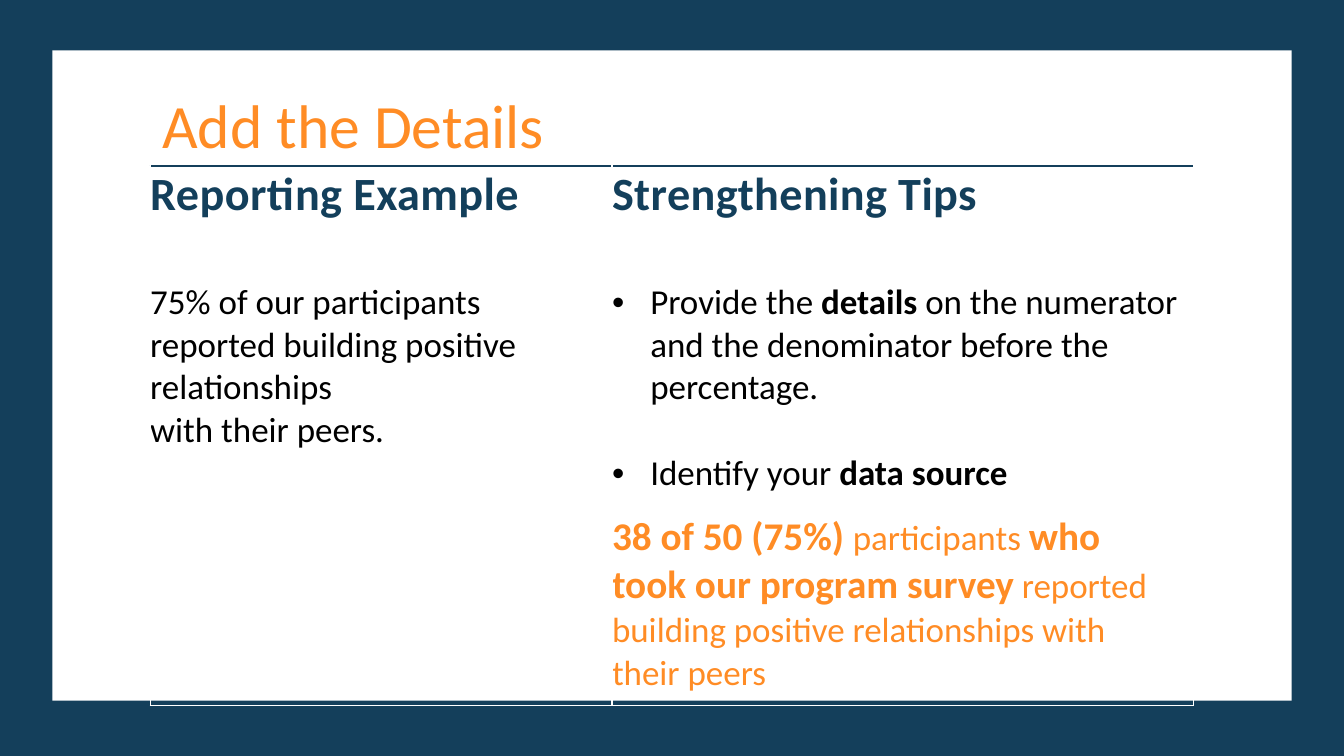
from lxml.etree import SubElement
from pptx import Presentation
from pptx.dml.color import RGBColor
from pptx.enum.shapes import MSO_SHAPE
from pptx.enum.text import MSO_ANCHOR, MSO_AUTO_SIZE, PP_ALIGN
from pptx.oxml import parse_xml
from pptx.oxml.ns import nsdecls, qn
from pptx.util import Inches, Pt

COLORS = {"navy": "143F5B", "heading": "133F5B", "orange": "FF8C25",
          "white": "FFFFFF", "black": "000000"}


def write(paragraph, *runs, size=25, color="black", bold=False, spacing=0,
          before=0, bullet=False):
    """Fill a paragraph; a run is a string or a (string, size) pair set in bold."""
    if bullet:
        properties = paragraph._p.get_or_add_pPr()
        properties.set("marL", str(Inches(0.38)))
        properties.set("indent", str(-Inches(0.38)))
        SubElement(properties, qn("a:buFont"), typeface="Arial")
        SubElement(properties, qn("a:buChar"), char="•")
    paragraph.alignment = PP_ALIGN.LEFT
    paragraph.space_before = Pt(before)
    for part in runs:
        text, run_size, run_bold = (part, size, bold) if isinstance(part, str) else (*part, True)
        run = paragraph.add_run()
        run.text = text
        run.font.name = "Calibri"
        run.font.size = Pt(run_size)
        run.font.bold = run_bold
        run.font.color.rgb = RGBColor.from_string(COLORS[color])
        if spacing:
            run._r.get_or_add_rPr().set("spc", str(round(spacing * 100)))


prs = Presentation()
prs.slide_width, prs.slide_height = Inches(13.33), Inches(7.5)
slide = prs.slides.add_slide(prs.slide_layouts[5])

# Navy frame around a white panel
for color, box in (("navy", (0, 0, 13.33, 7.5)), ("white", (0.52, 0.5, 12.29, 6.45))):
    panel = slide.shapes.add_shape(MSO_SHAPE.RECTANGLE, *map(Inches, box))
    panel.shadow.inherit = False
    panel.fill.solid()
    panel.fill.fore_color.rgb = RGBColor.from_string(COLORS[color])
    panel.line.fill.background()

# Two-column comparison
comparison = slide.shapes.add_table(
    2, 2, Inches(1.49), Inches(1.65), Inches(10.35), Inches(5.35)).table
comparison.first_row = comparison.horz_banding = False
for column, width in zip(comparison.columns, (4.58, 5.77)):
    column.width = Inches(width)
for row, height, right_margin in zip(comparison.rows, (1.14, 4.21), (0.02, 0.14)):
    row.height = Inches(height)
    for cell in row.cells:
        cell.margin_left = cell.margin_top = cell.margin_bottom = 0
        cell.margin_right = Inches(right_margin)
        cell.vertical_anchor = MSO_ANCHOR.TOP
        cell.fill.background()

for cell, heading in zip(comparison.rows[0].cells, ("Reporting Example", "Strengthening Tips")):
    write(cell.text_frame.paragraphs[0], heading, size=33, color="heading",
          bold=True, spacing=0.3)
    cell._tc.get_or_add_tcPr().insert(0, parse_xml(
        f'<a:lnT {nsdecls("a")} w="{Pt(1.5)}"><a:solidFill>'
        f'<a:srgbClr val="{COLORS["navy"]}"/></a:solidFill></a:lnT>'))

example = comparison.cell(1, 0).text_frame
write(example.paragraphs[0], "75% of our participants reported building positive relationships")
write(example.add_paragraph(), "with their peers.")

tips = comparison.cell(1, 1).text_frame
write(tips.paragraphs[0], "Provide the ", ("details", 25),
      " on the numerator and the denominator before the percentage.", bullet=True)
write(tips.add_paragraph(), "Identify your ", ("data source", 25), before=30.5, bullet=True)
write(tips.add_paragraph(), ("38 of 50 (75%) ", 28), "participants ",
      ("who took our program survey", 28),
      " reported building positive relationships with their peers",
      color="orange", before=13.4)

# Title, brought in front of the panel
title = slide.shapes.title
title.element.getparent().append(title.element)
title.left, title.top, title.width, title.height = map(Inches, (1.51, 0.81, 8.06, 0.84))
title.text_frame.auto_size = MSO_AUTO_SIZE.NONE
title.text_frame.vertical_anchor = MSO_ANCHOR.TOP
write(title.text_frame.paragraphs[0], "Add the Details", size=44, color="orange")

prs.save("out.pptx")
